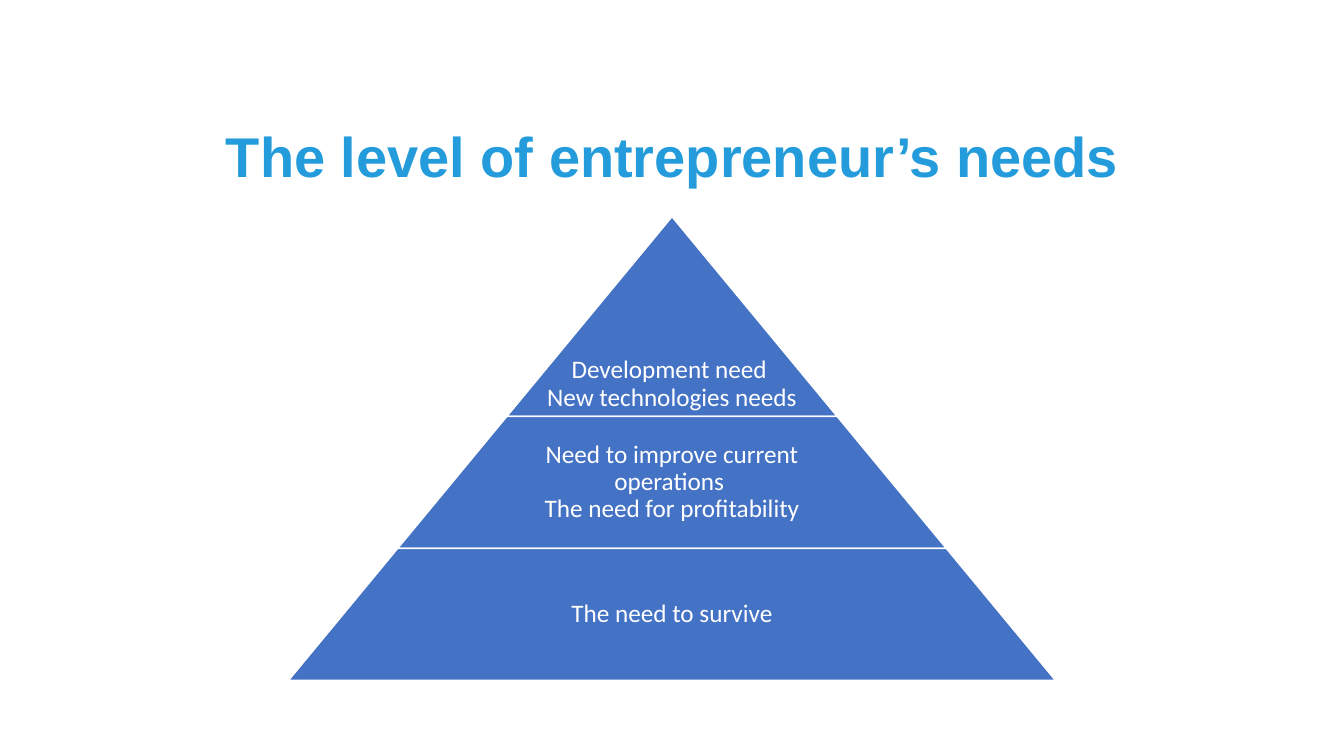
import pptx
import pptx.util
import pptx.dml.color
import pptx.enum.shapes
import pptx.enum.text

Pt = pptx.util.Pt
RGBColor = pptx.dml.color.RGBColor
Anchor = pptx.enum.text.MSO_ANCHOR

TITLE = "The level of entrepreneur’s needs"
LEVELS = [
    {"text": "Development need \vNew technologies needs", "height": 142.6,
     "text_share": 1, "anchor": Anchor.BOTTOM, "inset": 3.4},
    {"text": "Need to improve current operations \vThe need for profitability",
     "height": 94.3, "text_share": 0.65, "anchor": Anchor.MIDDLE, "inset": 1.8},
    {"text": "The need to survive", "height": 94.3,
     "text_share": 0.65, "anchor": Anchor.MIDDLE, "inset": 1.8},
]

TITLE_BLUE = RGBColor(0x24, 0x9C, 0xDC)
PYRAMID_BLUE = RGBColor(0x44, 0x72, 0xC4)
WHITE = RGBColor(0xFF, 0xFF, 0xFF)

CENTER = 480
PYRAMID_TOP = 154.8
SLOPE = 0.827

presentation = pptx.Presentation()
presentation.slide_width = Pt(960)
presentation.slide_height = Pt(540)
slide = presentation.slides.add_slide(presentation.slide_layouts[6])


def add_text(text, *, top, width, height, font, size, color,
             bold=False, anchor=Anchor.MIDDLE, inset=3.6):
    box = slide.shapes.add_textbox(
        Pt(CENTER - width / 2), Pt(top), Pt(width), Pt(height))
    frame = box.text_frame
    frame.word_wrap = True
    frame.vertical_anchor = anchor
    frame.margin_left = frame.margin_right = Pt(inset)
    frame.margin_top = frame.margin_bottom = Pt(inset)
    paragraph = frame.paragraphs[0]
    paragraph.text = text
    paragraph.alignment = pptx.enum.text.PP_ALIGN.CENTER
    paragraph.line_spacing = 0.9
    for run in paragraph.runs:
        run.font.name = font
        run.font.size = Pt(size)
        run.font.bold = bold
        run.font.color.rgb = color


add_text(TITLE, top=55.4, width=704.2, height=116.6,
         font="Arial", size=40, color=TITLE_BLUE, bold=True)

depth = 0
for level in LEVELS:
    top = PYRAMID_TOP + depth
    height = level["height"]
    depth += height
    width = 2 * SLOPE * depth
    tier = slide.shapes.add_shape(
        pptx.enum.shapes.MSO_SHAPE.TRAPEZOID,
        Pt(CENTER - width / 2), Pt(top), Pt(width), Pt(height))
    tier.adjustments[0] = SLOPE
    tier.shadow.inherit = False
    tier.fill.solid()
    tier.fill.fore_color.rgb = PYRAMID_BLUE
    tier.line.color.rgb = WHITE
    tier.line.width = Pt(1)
    add_text(level["text"], top=top, width=width * level["text_share"],
             height=height, font="Calibri", size=18, color=WHITE,
             anchor=level["anchor"], inset=level["inset"])

presentation.save("out.pptx")
